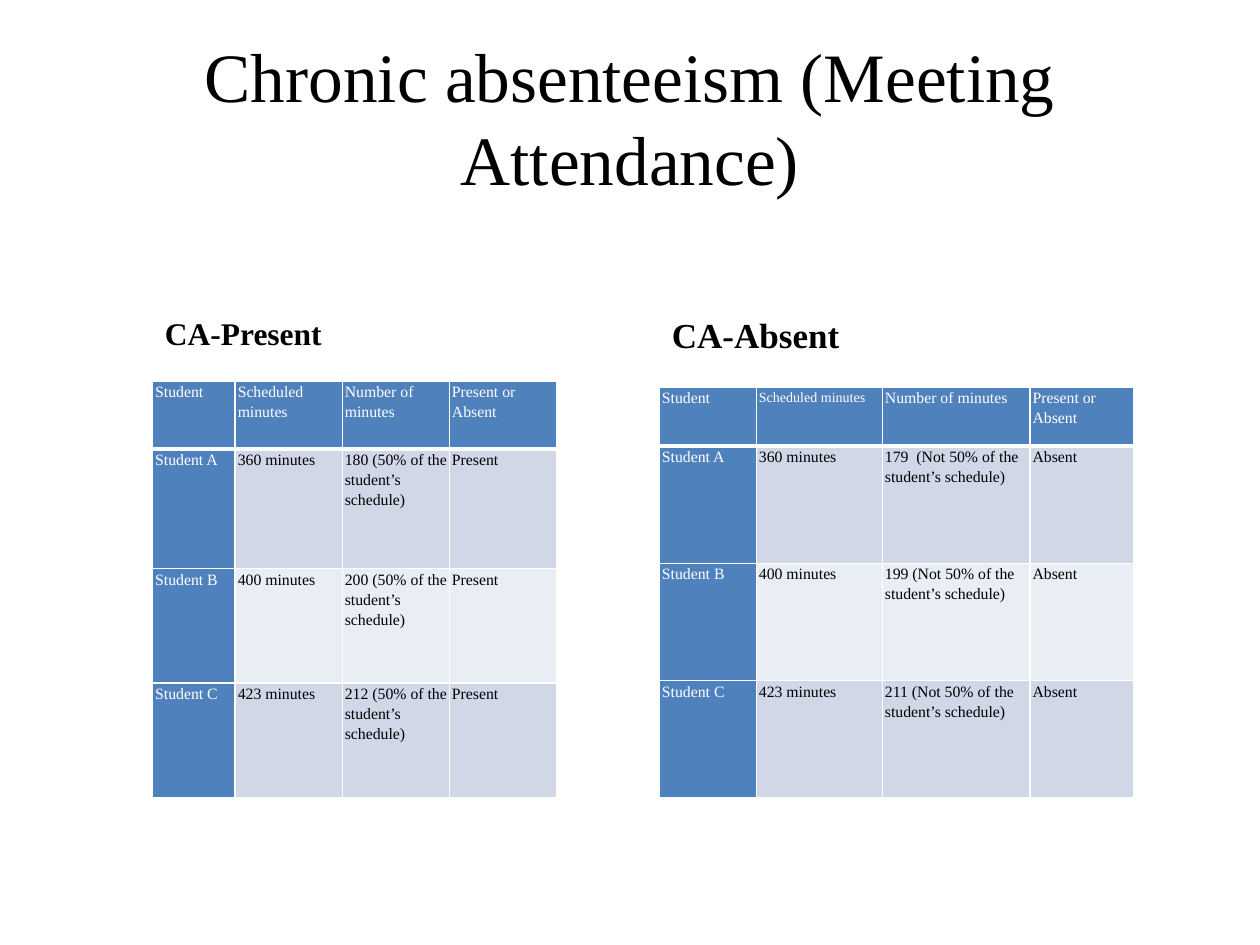
"""Build the chronic absenteeism slide with its two attendance tables."""
import pptx
import pptx.dml.color
import pptx.enum.text
import pptx.oxml
import pptx.oxml.ns
import pptx.util

Pt = pptx.util.Pt
ANCHOR = pptx.enum.text.MSO_ANCHOR
ALIGN = pptx.enum.text.PP_ALIGN

FONT = "Times New Roman"
COLORS = {
    "text": "000000",
    "white": "FFFFFF",
    "header": "4F81BD",
    "odd": "D0D8E8",
    "even": "E9EDF4",
}
HEADINGS = ["Student", "Scheduled minutes", "Number of minutes", "Present or Absent"]
STUDENTS = [("Student A", "360 minutes"), ("Student B", "400 minutes"), ("Student C", "423 minutes")]
PRESENT_MINUTES = [f"{minutes} (50% of the student’s schedule)" for minutes in (180, 200, 212)]
ABSENT_MINUTES = [f"{minutes} (Not 50% of the student’s schedule)" for minutes in ("179 ", 199, 211)]


def color(name):
    """Return the named colour."""
    return pptx.dml.color.RGBColor.from_string(COLORS[name])


def add_span(para, text, size, color_name="text", bold=False):
    """Add one formatted run to a paragraph."""
    span = para.add_run()
    span.text = text
    span.font.name = FONT
    span.font.size = Pt(size)
    span.font.bold = bold
    span.font.color.rgb = color(color_name)


def add_label(page, text, bounds, size, anchor, align=ALIGN.LEFT, bold=False, before=0):
    """Add a text box holding one paragraph."""
    box = page.shapes.add_textbox(*map(Pt, bounds))
    frame = box.text_frame
    frame.word_wrap = True
    frame.vertical_anchor = anchor
    para = frame.paragraphs[0]
    para.alignment = align
    para.space_before = Pt(before)
    add_span(para, text, size, bold=bold)


def set_borders(cell, bottom):
    """Draw white lines on the four sides of a cell."""
    properties = cell._tc.get_or_add_tcPr()
    for side, width in (("L", 1), ("R", 1), ("T", 1), ("B", bottom)):
        properties.append(pptx.oxml.parse_xml(
            f'<a:ln{side} {pptx.oxml.ns.nsdecls("a")} w="{Pt(width)}"><a:solidFill>'
            f'<a:srgbClr val="{COLORS["white"]}"/></a:solidFill></a:ln{side}>'))


def fill_cell(cell, text, size, fill, color_name, bottom):
    """Write and style one table cell."""
    cell.margin_left = cell.margin_right = Pt(1.5)
    cell.margin_top = cell.margin_bottom = Pt(0)
    set_borders(cell, bottom)
    cell.fill.solid()
    cell.fill.fore_color.rgb = color(fill)
    para = cell.text_frame.paragraphs[0]
    para.line_spacing = 1.15
    add_span(para, text, size, color_name)


def add_attendance(page, left, top, widths, heights, minutes, status, scheduled_size=9):
    """Add one attendance table with a header row and a header column."""
    rows = [HEADINGS] + [[*student, note, status] for student, note in zip(STUDENTS, minutes)]
    table = page.shapes.add_table(
        len(rows), len(HEADINGS), Pt(left), Pt(top), Pt(sum(widths)), Pt(sum(heights))).table
    for column, width in zip(table.columns, widths):
        column.width = Pt(width)
    for row_index, (height, texts) in enumerate(zip(heights, rows)):
        table.rows[row_index].height = Pt(height)
        for column_index, text in enumerate(texts):
            heading = row_index == 0 or column_index == 0
            fill = "header" if heading else "odd" if row_index % 2 else "even"
            size = scheduled_size if (row_index, column_index) == (0, 1) else 9
            fill_cell(table.cell(row_index, column_index), text, size, fill,
                      "white" if heading else "text", 1 if row_index else 3)


def main():
    """Build and save the slide."""
    deck = pptx.Presentation()
    deck.slide_width, deck.slide_height = Pt(720), Pt(540)
    page = deck.slides.add_slide(deck.slide_layouts[6])
    present_left, absent_left, label_top = 87.2, 376.8, 174.2
    add_label(page, "Chronic absenteeism (Meeting Attendance)", (36, 21.6, 648, 90),
              39.6, ANCHOR.MIDDLE, ALIGN.CENTER)
    add_label(page, "CA-Present", (present_left, label_top, 206, 30.3), 18,
              ANCHOR.BOTTOM, bold=True, before=3.6)
    add_attendance(page, absent_left, 221.3, [55.4, 72, 84.4, 59.2], [33.6] + [67] * 3,
                   ABSENT_MINUTES, "Absent", scheduled_size=8)
    add_label(page, "CA-Absent", (absent_left, label_top, 206, 32.4), 20,
              ANCHOR.BOTTOM, bold=True, before=4)
    add_attendance(page, present_left, 217.8, [47.2] + [61.2] * 3, [38.8, 68.4, 65.4, 65.4],
                   PRESENT_MINUTES, "Present")
    deck.save("out.pptx")


if __name__ == "__main__":
    main()
